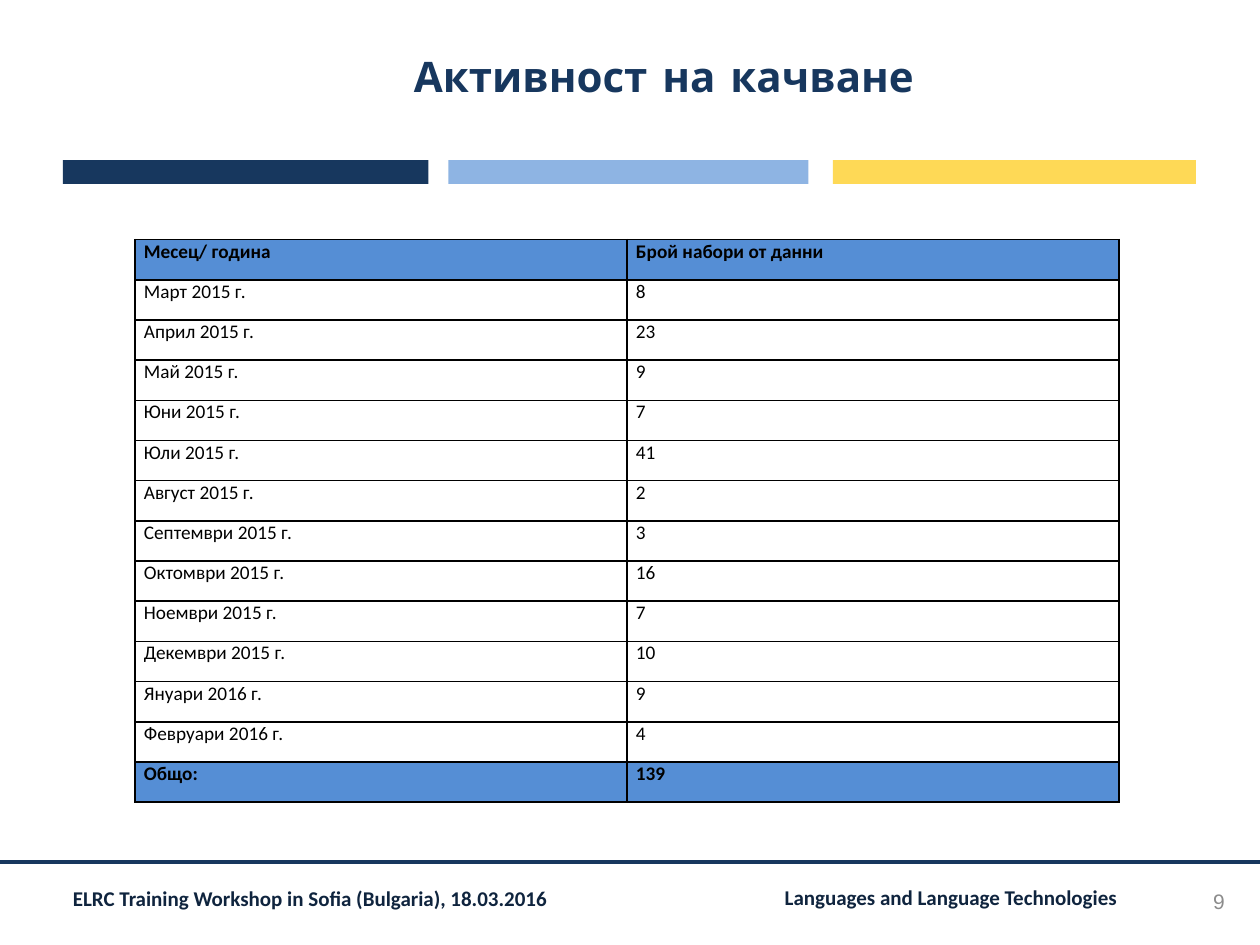
from lxml import etree
from pptx import Presentation
from pptx.dml.color import RGBColor
from pptx.enum.shapes import MSO_CONNECTOR, MSO_SHAPE
from pptx.enum.text import MSO_ANCHOR, PP_ALIGN
from pptx.oxml.ns import qn
from pptx.util import Cm, Pt

LEFT, CENTER, RIGHT = PP_ALIGN.LEFT, PP_ALIGN.CENTER, PP_ALIGN.RIGHT
TOP, MIDDLE = MSO_ANCHOR.TOP, MSO_ANCHOR.MIDDLE
RECT, STRAIGHT = MSO_SHAPE.RECTANGLE, MSO_CONNECTOR.STRAIGHT

COLORS = {
    "navy": "17375E", "sky": "8EB4E3", "yellow": "FED956", "blue": "558ED5",
    "ink": "0F243E", "black": "000000", "grey": "8C8C8C",
}

# Content
HEADER = ("Месец/ година", "Брой набори от данни")
UPLOADS = [
    ("Март 2015 г.", 8), ("Април 2015 г.", 23), ("Май 2015 г.", 9),
    ("Юни 2015 г.", 7), ("Юли 2015 г.", 41), ("Август 2015 г.", 2),
    ("Септември 2015 г.", 3), ("Октомври 2015 г.", 16),
    ("Ноември 2015 г.", 7), ("Декември 2015 г.", 10),
    ("Януари 2016 г.", 9), ("Февруари 2016 г.", 4),
]
TOTAL = ("Общо:", sum(count for _, count in UPLOADS))
BARS = [("navy", 1.27, 7.37), ("sky", 9.04, 7.26), ("yellow", 16.79, 7.32)]

# Formats
TITLE = {"size": Pt(24), "name": "Comic Neue", "bold": True}
FOOTER = {"size": Pt(12), "name": "Calibri", "bold": True}
NUMBER = {"size": Pt(12), "name": "Arial", "bold": False}
CELL = {"size": Pt(11), "name": "Calibri"}

# Text, box in cm, format, colour, alignment, anchor, margins in cm, line spacing
TEXTS = [
    ("ELRC Training Workshop in Sofia (Bulgaria), 18.03.2016",
     (1.27, 17.81, 11.99, 0.69), FOOTER, "ink", LEFT, TOP, (0.2, 0.1), 0.9),
    ("Languages and Language Technologies",
     (15.62, 17.78, 7.49, 0.66), FOOTER, "ink", LEFT, TOP, (0.2, 0.1), 0.9),
    ("Активност на качване",
     (4.75, 0.36, 17.27, 2.34), TITLE, "navy", CENTER, MIDDLE, (0, 0), 1.0),
    ("9", (19.02, 17.65, 5.92, 1.02), NUMBER, "grey", RIGHT, MIDDLE,
     (0.25, 0.13), 1.0),
]


def rgb(name):
    return RGBColor.from_string(COLORS[name])


def set_font(font, style, color):
    for key, value in style.items():
        setattr(font, key, value)
    font.color.rgb = rgb(color)


def add_text(s, text, box, style, color, align, anchor, margins, spacing):
    tf = s.shapes.add_textbox(*map(Cm, box)).text_frame
    tf.word_wrap = True
    tf.vertical_anchor = anchor
    tf.margin_left = tf.margin_right = Cm(margins[0])
    tf.margin_top = tf.margin_bottom = Cm(margins[1])
    p = tf.paragraphs[0]
    p.alignment, p.line_spacing = align, spacing
    r = p.add_run()
    r.text = text
    set_font(r.font, style, color)


def add_borders(cell):
    """Borders come before the fill in the cell properties."""
    tc_pr = cell._tc.get_or_add_tcPr()
    for i, side in enumerate(("lnL", "lnR", "lnT", "lnB")):
        ln = etree.Element(qn(f"a:{side}"), w=str(Pt(1)))
        fill = etree.SubElement(ln, qn("a:solidFill"))
        etree.SubElement(fill, qn("a:srgbClr"), val=COLORS["black"])
        tc_pr.insert(i, ln)


def add_upload_table(s):
    rows = [HEADER, *UPLOADS, TOTAL]
    width, row_height = 19.84, 0.81
    table = s.shapes.add_table(len(rows), len(HEADER), Cm(2.72), Cm(4.83),
                               Cm(width), Cm(row_height * len(rows))).table
    table.first_row = table.horz_banding = False
    for row in table.rows:
        row.height = Cm(row_height)
    for i, values in enumerate(rows):
        strong = i in (0, len(rows) - 1)
        for j, value in enumerate(values):
            cell = table.cell(i, j)
            cell.margin_left = cell.margin_right = Cm(0.18)
            cell.margin_top = cell.margin_bottom = 0
            if strong:
                cell.fill.solid()
                cell.fill.fore_color.rgb = rgb("blue")
            else:
                cell.fill.background()
            add_borders(cell)
            r = cell.text_frame.paragraphs[0].add_run()
            r.text = str(value)
            set_font(r.font, {**CELL, "bold": strong}, "black")


def main():
    prs = Presentation()
    prs.slide_width, prs.slide_height = Cm(25.4), Cm(19.05)
    s = prs.slides.add_slide(prs.slide_layouts[6])

    # Colour bars under the title
    for color, left, width in BARS:
        sp = s.shapes.add_shape(RECT, Cm(left), Cm(3.23), Cm(width), Cm(0.48))
        sp.shadow.inherit = False
        sp.fill.solid()
        sp.fill.fore_color.rgb = rgb(color)
        sp.line.fill.background()

    # Footer rule
    rule = s.shapes.add_connector(STRAIGHT, 0, Cm(17.37), prs.slide_width, Cm(17.37))
    rule.line.color.rgb = rgb("navy")
    rule.line.width = Pt(2.25)
    etree.SubElement(rule._element.spPr, qn("a:effectLst"))

    # Table, title, footer and page number
    add_upload_table(s)
    for text in TEXTS:
        add_text(s, *text)

    prs.save("out.pptx")


if __name__ == "__main__":
    main()
